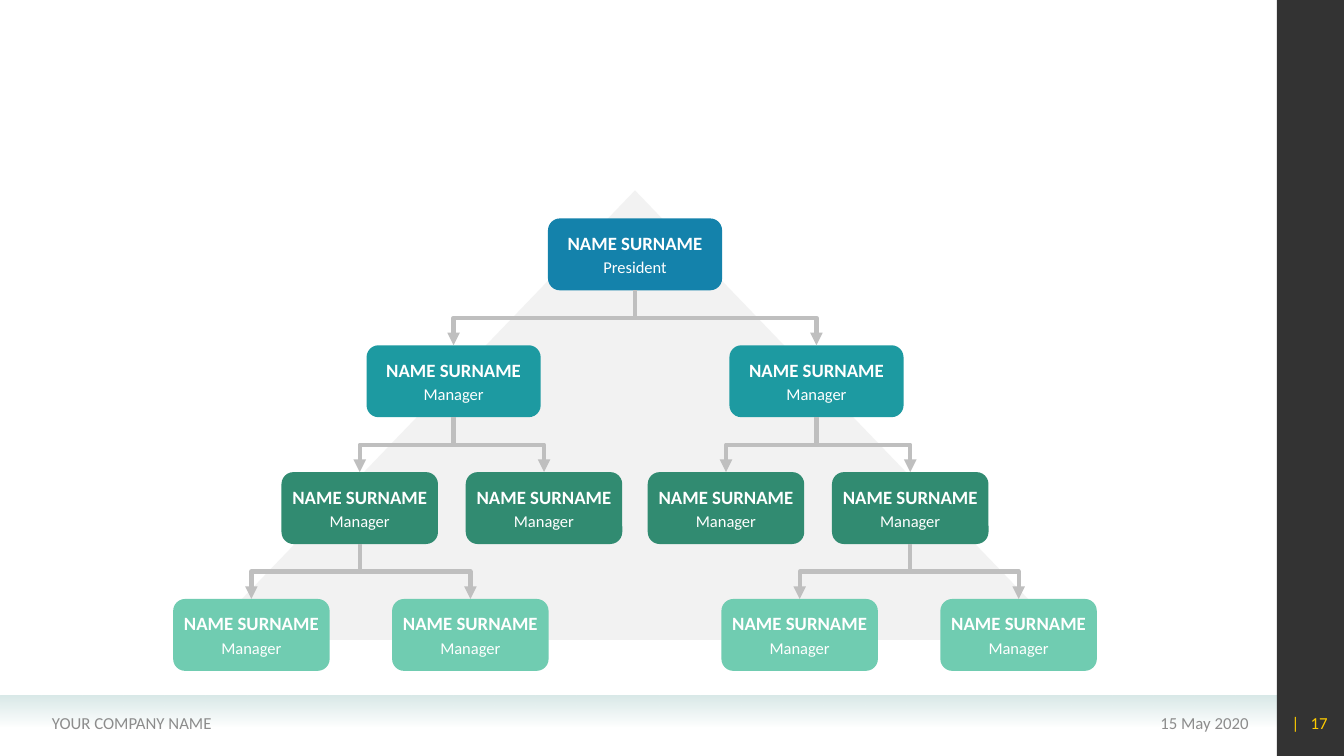
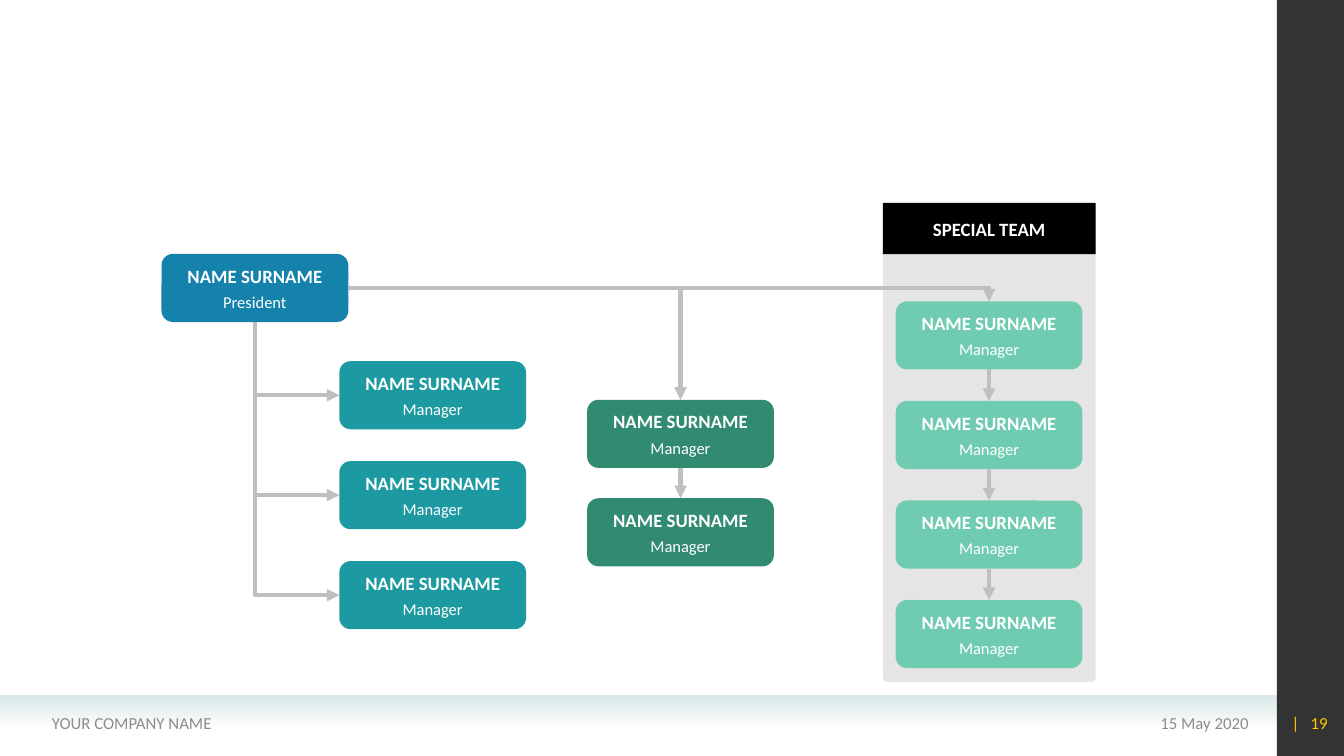
from lxml.etree import SubElement
from pptx import Presentation
from pptx.dml.color import RGBColor
from pptx.enum.shapes import MSO_CONNECTOR as LINE, MSO_SHAPE as SHAPE
from pptx.enum.text import MSO_ANCHOR as ANCHOR, PP_ALIGN as ALIGN
from pptx.oxml.ns import qn
from pptx.util import Pt

W, H, SIDE = 960, 540, 48
FONT = "Calibri"
WHITE, BLACK, GREY, GOLD = "FFFFFF", "000000", "8C8C8C", "FFCC00"
ARROW, TRIANGLE, BAND = "BFBFBF", "F2F2F2", "D9E9E8"
TIERS = ["1482AB", "1D9AA1", "318B71", "70CCB1"]
TOP, LEFT, BOTTOM, RIGHT = range(4)


def paint(color, value):
    """Set a colour from a hex string."""
    color.rgb = RGBColor.from_string(value)


def fade(sp, percent):
    """Set the opacity of the last colour in a shape's fill."""
    clr = list(sp.element.spPr.iter(qn("a:srgbClr")))[-1]
    SubElement(clr, qn("a:alpha")).set("val", str(percent * 1000))


def add_run(p, text, size, color, bold=False):
    """Add one formatted run to a paragraph."""
    r = p.add_run()
    r.text = text
    r.font.name, r.font.size, r.font.bold = FONT, Pt(size), bold
    paint(r.font.color, color)
    return r


def add_box(s, x, y, w, h, color, kind=SHAPE.RECTANGLE):
    """Draw a flat filled shape without outline."""
    sp = s.shapes.add_shape(kind, Pt(x), Pt(y), Pt(w), Pt(h))
    sp.shadow.inherit = False
    sp.line.fill.background()
    sp.fill.solid()
    paint(sp.fill.fore_color, color)
    return sp


def add_label(s, x, w, align):
    """Add an empty footer text box and return its paragraph."""
    tf = s.shapes.add_textbox(Pt(x), Pt(502), Pt(w), Pt(28.8)).text_frame
    tf.word_wrap = True
    tf.vertical_anchor = ANCHOR.MIDDLE
    p = tf.paragraphs[0]
    p.alignment = align
    return p


def add_frame(s, number):
    """Draw the footer band, side bar and footer texts."""
    band = add_box(s, 0, 496.6, W - SIDE, 22.4, BAND)
    band.fill.gradient()
    band.fill.gradient_angle = 270
    for stop, position in zip(band.fill.gradient_stops, (0, 1)):
        stop.position = position
        paint(stop.color, BAND)
    fade(band, 0)
    fade(add_box(s, W - SIDE, 0, SIDE, H, BLACK), 80)
    add_run(add_label(s, 655, 244, ALIGN.RIGHT), "15 May 2020", 12, GREY)
    add_run(add_label(s, 30, 353, ALIGN.LEFT), "YOUR COMPANY NAME", 12, GREY)
    p = add_label(s, 907, 48.4, ALIGN.RIGHT)
    bar = add_run(p, "|", 12, GOLD)
    bar.font._element.set("spc", "810")
    add_run(p, str(number), 12, GOLD)


def add_card(s, x, y, w, h, color, role="Manager", gap=2.3):
    """Draw a rounded card with a name and a role."""
    sp = add_box(s, x, y, w, h, color, SHAPE.ROUNDED_RECTANGLE)
    tf = sp.text_frame
    tf.word_wrap = True
    tf.vertical_anchor = ANCHOR.MIDDLE
    tf.margin_left = tf.margin_right = tf.margin_top = tf.margin_bottom = 0
    p = tf.paragraphs[0]
    p.alignment = ALIGN.CENTER
    add_run(p, "NAME SURNAME", 13.4, WHITE, True)
    p = tf.add_paragraph()
    p.alignment = ALIGN.CENTER
    p.space_before = Pt(gap)
    add_run(p, role, 11.8, WHITE)
    return sp


def add_arrow(s, start, start_side, end, end_side, kind="line"):
    """Join two cards with a straight or bent arrow."""
    c = s.shapes.add_connector(LINE.STRAIGHT, 0, 0, 0, 0)
    c.begin_connect(start, start_side)
    c.end_connect(end, end_side)
    c.line.width = Pt(3)
    paint(c.line.color, ARROW)
    spPr = c.element.spPr
    SubElement(spPr.find(qn("a:ln")), qn("a:tailEnd")).set("type", "triangle")
    SubElement(spPr, qn("a:effectLst"))
    spPr.find(qn("a:prstGeom")).set("prst", kind)
    if kind != "line" and start_side == BOTTOM:
        turn_down(c, spPr.find(qn("a:xfrm")))


def turn_down(c, xfrm):
    """Rotate a bent connector so that it leaves downwards."""
    dx, dy = c.end_x - c.begin_x, c.end_y - c.begin_y
    mid_x, mid_y = (c.begin_x + c.end_x) // 2, (c.begin_y + c.end_y) // 2
    c.left, c.top = mid_x - dy // 2, mid_y - abs(dx) // 2
    c.width, c.height = dy, abs(dx)
    xfrm.set("rot", "16200000" if dx > 0 else "5400000")
    xfrm.set("flipH", "1" if dx > 0 else "0")


def add_pyramid(s, x, y, w, h):
    """Draw a four-tier organisation chart over a triangle."""
    add_box(s, x, y, w, h, TRIANGLE, SHAPE.ISOSCELES_TRIANGLE)
    offsets = [(0,), (-129.6, 129.6), (-196.6, -65, 65, 196.6),
               (-274, -117.6, 117.6, 274)]
    parents = [(), (0, 0), (0, 0, 1, 1), (0, 0, 3, 3)]
    above = []
    for i, (row, links) in enumerate(zip(offsets, parents)):
        card_w = 124.4 if i < 2 else 111.8
        cards = [add_card(s, x + w / 2 + dx - card_w / 2, y + 20 + i * 90.6,
                          card_w, 51.4, TIERS[i],
                          "Manager" if i else "President") for dx in row]
        for parent, card in zip(links, cards):
            add_arrow(s, above[parent], BOTTOM, card, TOP, "bentConnector3")
        above = cards


def add_column(s, x, y, pitch, count, color, role="Manager"):
    """Stack equal cards downwards."""
    return [add_card(s, x, y + i * pitch, 133.4, 48.6, color, role, 3.6)
            for i in range(count)]


def add_team(s, x, y, w, h):
    """Draw the special team panel and its cards."""
    panel = add_box(s, x, y, w, h, BLACK, SHAPE.ROUNDED_RECTANGLE)
    panel.adjustments[0] = 0.02
    fade(panel, 10)
    header = add_box(s, x, y, w, 36.5, BLACK)
    p = header.text_frame.paragraphs[0]
    p.alignment = ALIGN.CENTER
    add_run(p, "SPECIAL TEAM", 13.4, WHITE, True)
    return add_column(s, x + 9.2, y + 70.3, 71.1, 4, TIERS[3])


def add_branches(s, x, y, w, h):
    """Draw a president with three branches of managers."""
    team = add_team(s, x + w - 152, y, 152, h)
    president = add_column(s, x, y + 36.4, 0, 1, TIERS[0], "President")[0]
    staff = add_column(s, x + 127, y + 113, 71.4, 3, TIERS[1])
    pair = add_column(s, x + 304, y + 140.6, 70.3, 2, TIERS[2])
    for card in staff:
        add_arrow(s, president, BOTTOM, card, LEFT, "bentConnector2")
    for chain in (pair, team):
        add_arrow(s, president, RIGHT, chain[0], TOP, "bentConnector2")
        for upper, lower in zip(chain, chain[1:]):
            add_arrow(s, upper, BOTTOM, lower, TOP)


def main():
    """Build and save the two slides."""
    prs = Presentation()
    prs.slide_width, prs.slide_height = Pt(W), Pt(H)
    slides = [(17, add_pyramid, (144.8, 136, 617.6, 321)),
              (19, add_branches, (115.4, 145, 667.2, 342))]
    for number, draw, box in slides:
        s = prs.slides.add_slide(prs.slide_layouts[6])
        add_frame(s, number)
        draw(s, *box)
    prs.save("out.pptx")


if __name__ == "__main__":
    main()
